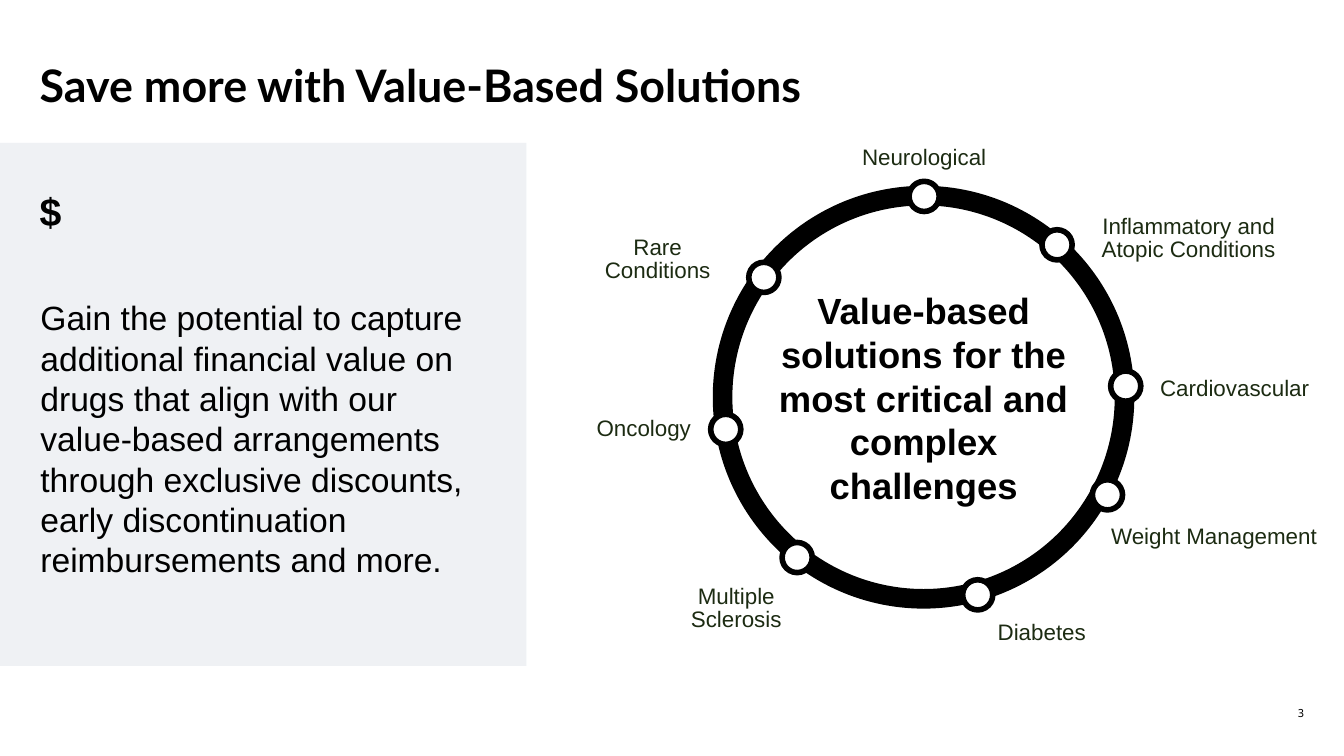
import dataclasses

import pptx
import pptx.dml.color
import pptx.enum.shapes
import pptx.enum.text
import pptx.oxml
import pptx.oxml.ns
import pptx.util
from pptx.util import Cm

TITLE = "Save more with Value-Based Solutions"
SYMBOL = "$"
BENEFIT = (
    "Gain the potential to capture additional financial value on drugs that align "
    "with our value-based arrangements through exclusive discounts, early "
    "discontinuation reimbursements and more."
)
RING_MESSAGE = "Value-based solutions for the most critical and complex challenges"
PAGE_NUMBER = "3"

# Condition, marker centre (x, y), label (left, top, width), label lines; in cm
CONDITIONS = [
    ("Neurological", (23.29, 4.95), (20.75, 3.71, 5.08), 1),
    ("Inflammatory and Atopic Conditions", (26.64, 6.17), (27.15, 5.44, 5.61), 2),
    ("Cardiovascular", (28.37, 9.73), (28.93, 9.53, 4.37), 1),
    ("Weight Management", (27.91, 12.47), (27.56, 13.26, 6.07), 1),
    ("Diabetes", (24.64, 14.99), (24.59, 15.67, 3.33), 1),
    ("Multiple Sclerosis", (20.09, 14.05), (16.51, 14.78, 4.09), 2),
    ("Oncology", (18.29, 10.82), (14.55, 10.54, 3.35), 1),
    ("Rare Conditions", (19.25, 6.99), (14.58, 5.97, 3.99), 2),
]
MARKER_SIZE = 0.76
LABEL_LINE_HEIGHT = 0.58
MARGIN = 1.0


@dataclasses.dataclass(frozen=True)
class Theme:
    ink: str = "000000"
    label: str = "1C2B12"
    paper: str = "FFFFFF"
    panel: str = "EBEEF2"
    panel_opacity: int = 80
    heading_font: str = "Lato"
    body_font: str = "Arial"
    number_font: str = "Noto Sans Mono"
    title_size: int = 32
    symbol_size: int = 28
    message_size: int = 26
    body_size: int = 24
    label_size: int = 16
    number_size: int = 8
    ring_width: int = 14
    marker_width: int = 4


THEME = Theme()
SHAPE = pptx.enum.shapes.MSO_SHAPE
ALIGN = pptx.enum.text.PP_ALIGN
ANCHOR = pptx.enum.text.MSO_ANCHOR


def rgb(value):
    return pptx.dml.color.RGBColor.from_string(value)


def write(shape, text, size, font=THEME.body_font, color=THEME.ink, bold=False,
          align=ALIGN.LEFT, anchor=ANCHOR.TOP):
    """Fill a shape with one run in a box without insets; return the paragraph."""
    frame = shape.text_frame
    frame.word_wrap = True
    frame.auto_size = pptx.enum.text.MSO_AUTO_SIZE.NONE
    frame.vertical_anchor = anchor
    frame.margin_left = frame.margin_top = frame.margin_right = frame.margin_bottom = 0
    paragraph = frame.paragraphs[0]
    paragraph.alignment = align
    run = paragraph.add_run()
    run.text = text
    run.font.name = font
    run.font.size = pptx.util.Pt(size)
    run.font.bold = bold
    run.font.color.rgb = rgb(color)
    return paragraph


def add_text(slide, box, text, size, **style):
    shape = slide.shapes.add_textbox(*map(Cm, box))
    return write(shape, text, size, **style)


def add_circle(slide, box, line_width, fill=None):
    circle = slide.shapes.add_shape(SHAPE.OVAL, *map(Cm, box))
    circle.shadow.inherit = False
    if fill:
        circle.fill.solid()
        circle.fill.fore_color.rgb = rgb(fill)
    else:
        circle.fill.background()
    circle.line.color.rgb = rgb(THEME.ink)
    circle.line.width = pptx.util.Pt(line_width)


def add_panel(slide):
    panel = slide.shapes.add_shape(SHAPE.RECTANGLE, 0, Cm(3.6), Cm(13.27), Cm(13.18))
    panel.shadow.inherit = False
    panel.line.fill.background()
    panel.fill.solid()
    panel.fill.fore_color.rgb = rgb(THEME.panel)
    color = panel.fill._xPr.find(".//" + pptx.oxml.ns.qn("a:srgbClr"))
    alpha = pptx.oxml.parse_xml(
        f'<a:alpha {pptx.oxml.ns.nsdecls("a")} val="{THEME.panel_opacity * 1000}"/>'
    )
    color.append(alpha)


def add_title(slide):
    title = slide.shapes.title
    title.left, title.top, title.width, title.height = map(Cm, (MARGIN, 1.45, 21.08, 2.79))
    write(title, TITLE, THEME.title_size, font=THEME.heading_font, bold=True)


def add_benefit(slide):
    add_text(slide, (MARGIN, 4.72, 1.65, 1.19), SYMBOL, THEME.symbol_size, bold=True)
    paragraph = add_text(slide, (1.02, 7.49, 11.35, 9.27), BENEFIT, THEME.body_size)
    paragraph.space_after = pptx.util.Pt(6)


def add_condition_ring(slide):
    add_circle(slide, (18.21, 4.93, 10.13, 10.16), THEME.ring_width)
    add_text(slide, (19, 7.44, 8.56, 5.16), RING_MESSAGE, THEME.message_size,
             bold=True, align=ALIGN.CENTER, anchor=ANCHOR.MIDDLE)
    for name, (x, y), label_box, lines in CONDITIONS:
        corner = (x - MARKER_SIZE / 2, y - MARKER_SIZE / 2)
        add_circle(slide, (*corner, MARKER_SIZE, MARKER_SIZE), THEME.marker_width, THEME.paper)
        paragraph = add_text(slide, (*label_box, lines * LABEL_LINE_HEIGHT), name,
                             THEME.label_size, color=THEME.label,
                             align=ALIGN.CENTER, anchor=ANCHOR.MIDDLE)
        paragraph.line_spacing = 0.85


def main():
    presentation = pptx.Presentation()
    presentation.slide_width, presentation.slide_height = Cm(33.87), Cm(19.05)
    slide = presentation.slides.add_slide(presentation.slide_layouts.get_by_name("Title Only"))
    add_panel(slide)
    add_title(slide)
    add_benefit(slide)
    add_condition_ring(slide)
    add_text(slide, (32.13, 17.63, 0.74, 0.51), PAGE_NUMBER, THEME.number_size,
             font=THEME.number_font, align=ALIGN.RIGHT, anchor=ANCHOR.BOTTOM)
    presentation.save("out.pptx")


if __name__ == "__main__":
    main()
